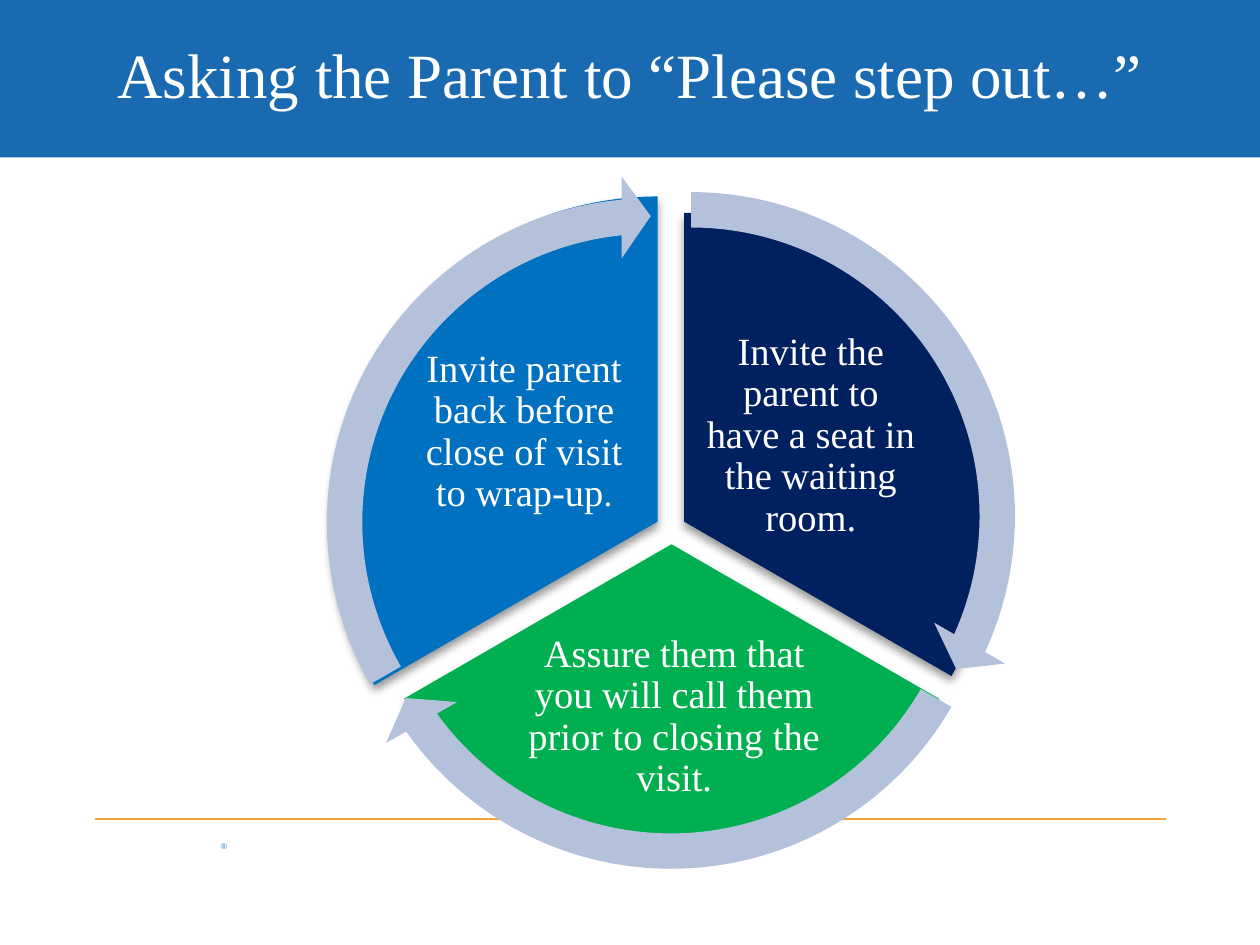
from lxml import etree
from pptx import Presentation
from pptx import util as u
from pptx.dml.color import RGBColor
from pptx.enum import shapes, text
from pptx.oxml.ns import qn

FONT = "Times New Roman"
BLUE, WHITE, ARROW_GREY, ORANGE = "196AB0", "FFFFFF", "B3C1DB", "EEA33C"
# Angles are in units of 100000/60000 degree, so a full turn is 216.
TURN, THIRD, ARROW_TIP = 216, 72, 3.275

STEPS = [
    dict(start=162, color="002060", pie=(2.98, 1.69, 4.9, 4.9),
         label=(5.56, 2.73, 1.75, 1.46), arrow=(2.73, 1.34),
         words=[("Invite the parent to have a seat in the waiting room.", 22)]),
    dict(start=18, color="00B050", pie=(2.88, 1.87, 4.9, 4.9),
         label=(4.04, 5.05, 2.62, 1.28), arrow=(2.57, 1.57),
         words=[("Assure them that you will call them prior to closing the visit.", 22)]),
    dict(start=90, color="0070C0", pie=(2.62, 1.56, 5.2, 5.16),
         label=(3.23, 2.66, 1.86, 1.54), arrow=(2.41, 1.39),
         words=[("Invite parent back before close of visit to wrap-up", 22), (".", 20)]),
]


def rgb(value):
    return RGBColor.from_string(value)


def inches(values):
    return [u.Inches(value) for value in values]


def add_filled(page, kind, place, color, adjustments=()):
    shape = page.shapes.add_shape(kind, *inches(place))
    shape.shadow.inherit = False
    shape.fill.solid()
    shape.fill.fore_color.rgb = rgb(color)
    shape.line.fill.background()
    for index, value in enumerate(adjustments):
        shape.adjustments[index] = value
    return shape


def add_drop_shadow(shape):
    effects = shape._element.spPr.find(qn("a:effectLst"))
    shadow = etree.SubElement(effects, qn("a:outerShdw"), blurRad=str(u.Pt(5.2)),
                              dist=str(u.Pt(3)), dir="5400000", rotWithShape="0")
    color = etree.SubElement(shadow, qn("a:srgbClr"), val="000000")
    etree.SubElement(color, qn("a:alpha"), val="40000")


def add_text(page, place, spans, color=WHITE, align=text.PP_ALIGN.CENTER,
             anchor=text.MSO_ANCHOR.MIDDLE, inset=0.03, spacing=None, after=None):
    """Add one paragraph made of (words, size) spans."""
    box = page.shapes.add_textbox(*inches(place))
    frame = box.text_frame
    frame.word_wrap = True
    frame.vertical_anchor = anchor
    frame.margin_left = frame.margin_right = u.Inches(inset)
    frame.margin_top = frame.margin_bottom = u.Inches(inset)
    para = frame.paragraphs[0]
    para.alignment = align
    para.line_spacing = spacing
    para.space_after = after
    for words, size in spans:
        span = para.add_run()
        span.text = words
        span.font.name = FONT
        span.font.size = u.Pt(size)
        span.font.color.rgb = rgb(color)


def add_rule(page, start, end, color, width):
    line = page.shapes.add_connector(shapes.MSO_CONNECTOR.STRAIGHT, *inches(start + end))
    line.line.color.rgb = rgb(color)
    line.line.width = u.Pt(width)
    etree.SubElement(line._element.spPr, qn("a:effectLst"))


def add_slice(page, step):
    end = (step["start"] + THIRD) % TURN
    pie = add_filled(page, shapes.MSO_SHAPE.PIE, step["pie"], step["color"],
                     (step["start"], end))
    add_drop_shadow(pie)
    add_text(page, step["label"], step["words"], spacing=0.9, after=u.Pt(7.7))


def add_cycle_arrow(page, step):
    end = (step["start"] + THIRD) % TURN - ARROW_TIP
    add_filled(page, shapes.MSO_SHAPE.CIRCULAR_ARROW, step["arrow"] + (5.51, 5.51),
               ARROW_GREY, (0.051, ARROW_TIP, end, step["start"], 0.059))


def main():
    deck = Presentation()
    deck.slide_width, deck.slide_height = inches((10, 7.5))
    page = deck.slides.add_slide(deck.slide_layouts[6])
    add_filled(page, shapes.MSO_SHAPE.RECTANGLE, (0, 0, 10, 1.25), BLUE)
    add_text(page, (1.75, 6.67, 0.25, 0.08), [("®", 5)], color=BLUE, inset=0,
             align=text.PP_ALIGN.LEFT, anchor=text.MSO_ANCHOR.TOP)
    add_rule(page, (0.75, 6.5), (9.25, 6.5), ORANGE, 0.75)
    add_text(page, (0.5, 0.08, 9, 1), [("Asking the Parent to “Please step out…”", 36)],
             inset=0.05)
    for step in STEPS:
        add_slice(page, step)
    for step in STEPS:
        add_cycle_arrow(page, step)
    deck.save("out.pptx")


if __name__ == "__main__":
    main()
